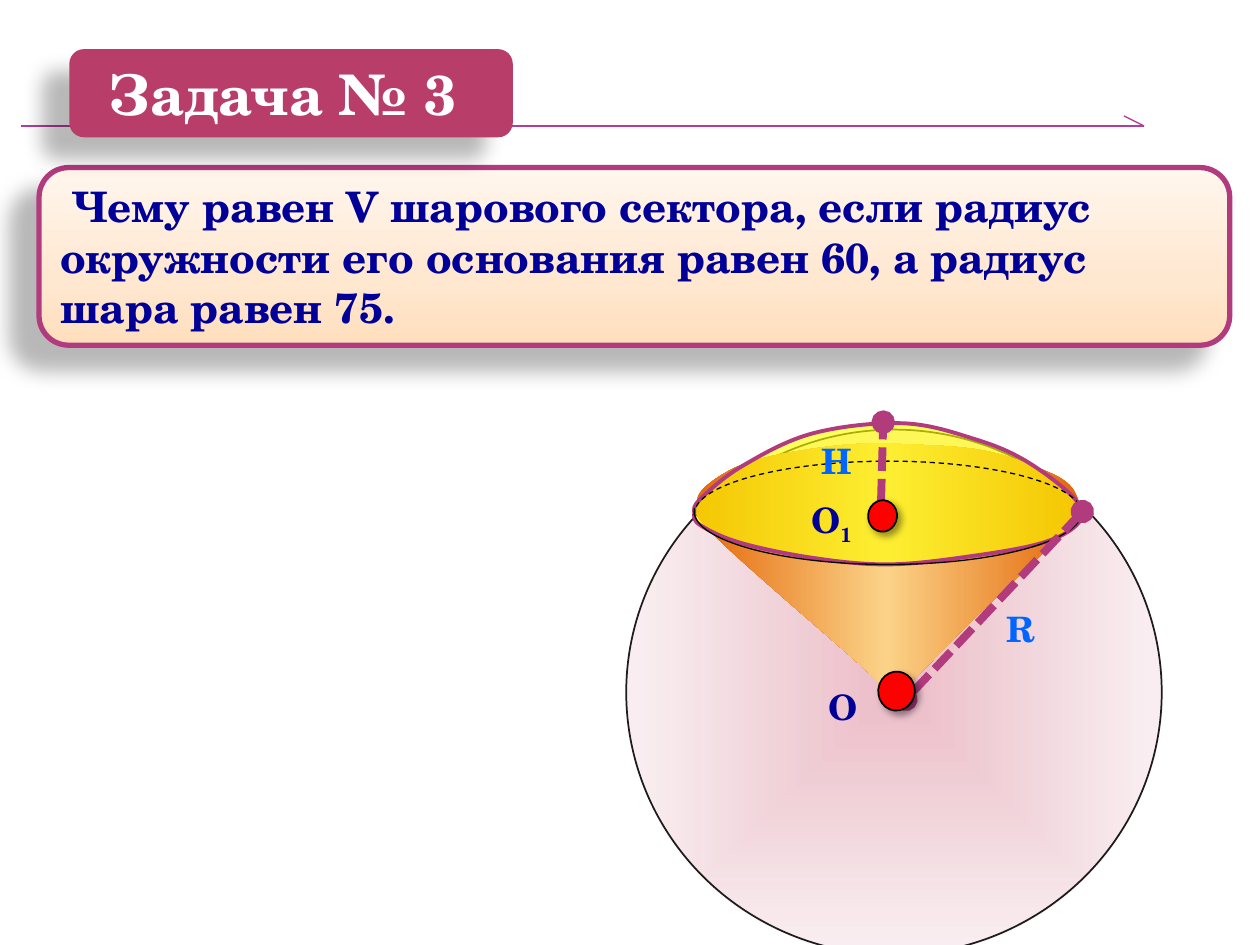
"""Builds a geometry slide about the volume of a spherical sector."""
import pptx
import pptx.dml.color
import pptx.enum.dml
import pptx.enum.shapes
import pptx.enum.text
import pptx.oxml
import pptx.oxml.ns
import pptx.oxml.xmlchemy
import pptx.util

Inches = pptx.util.Inches
Pt = pptx.util.Pt
RGBColor = pptx.dml.color.RGBColor
SHAPE = pptx.enum.shapes.MSO_SHAPE
STRAIGHT = pptx.enum.shapes.MSO_CONNECTOR.STRAIGHT
DASH = pptx.enum.dml.MSO_LINE
ALIGN = pptx.enum.text.PP_ALIGN
ANCHOR = pptx.enum.text.MSO_ANCHOR
FIT = pptx.enum.text.MSO_AUTO_SIZE

WHITE = RGBColor(0xFF, 0xFF, 0xFF)
BLACK = RGBColor(0x00, 0x00, 0x00)
RED = RGBColor(0xFF, 0x00, 0x00)
YELLOW = RGBColor(0xFF, 0xFF, 0x00)
NAVY = RGBColor(0x00, 0x00, 0x99)
BLUE = RGBColor(0x00, 0x66, 0xFF)
CRIMSON = RGBColor(0xB8, 0x3D, 0x68)
PLUM = RGBColor(0xB2, 0x3B, 0x7E)
VIOLET = RGBColor(0xB1, 0x3F, 0x9A)
CHARCOAL = RGBColor(0x1C, 0x1C, 0x1C)
PEACH = RGBColor(0xFF, 0xDE, 0xBC)
PALE_PEACH = RGBColor(0xFF, 0xE7, 0xD0)
CREAM = RGBColor(0xFF, 0xF6, 0xED)
ROSE = RGBColor(0xE2, 0x96, 0xA8)
PINK = RGBColor(0xEB, 0xC0, 0xC9)
PALE_PINK = RGBColor(0xF5, 0xE0, 0xE5)
ORANGE = RGBColor(0xE3, 0x64, 0x06)
SAND = RGBColor(0xFB, 0xD3, 0x88)

WIDE_SHADOW = (28, 11.8, 19.7, 141)
SMALL_SHADOW = (40, 4, 3, 45)
LINEAR = '<a:lin ang="{}" scaled="0"/>'
CENTRED = '<a:path path="shape"><a:fillToRect l="50000" t="50000" r="50000" b="50000"/></a:path>'


def write(shape, text, size=20, color=NAVY, subscript="", align=ALIGN.LEFT,
          anchor=ANCHOR.TOP, wrap=False, fit=FIT.SHAPE_TO_FIT_TEXT):
    frame = shape.text_frame
    frame.word_wrap = wrap
    frame.auto_size = fit
    frame.vertical_anchor = anchor
    paragraph = frame.paragraphs[0]
    paragraph.alignment = align
    for content in filter(None, (text, subscript)):
        run = paragraph.add_run()
        run.text = content
        run.font.name = "TeX Gyre Schola"
        run.font.size = Pt(size)
        run.font.bold = True
        run.font.color.rgb = color
        if content == subscript:
            run._r.get_or_add_rPr().set("baseline", "-25000")


def style(shape, stops=(), direction="", line=None, width=1, dash=None, shadow=None, ends=False):
    properties = shape._element.spPr
    namespace = pptx.oxml.ns.nsdecls("a")
    colors = [f'<a:srgbClr val="{color}"><a:alpha val="{alpha * 1000}"/></a:srgbClr>'
              for _, color, alpha in stops]
    if len(stops) == 1:
        properties.append(pptx.oxml.parse_xml(
            f"<a:solidFill {namespace}>{colors[0]}</a:solidFill>"))
    elif stops:
        marks = "".join(f'<a:gs pos="{stop[0] * 1000}">{color}</a:gs>'
                        for stop, color in zip(stops, colors))
        properties.append(pptx.oxml.parse_xml(
            f'<a:gradFill {namespace} rotWithShape="1"><a:gsLst>{marks}</a:gsLst>{direction}</a:gradFill>'))
    elif hasattr(shape, "fill"):
        shape.fill.background()
    if line is None:
        shape.line.fill.background()
    else:
        shape.line.color.rgb = line
        shape.line.width = Pt(width)
        if dash is not None:
            shape.line.dash_style = dash
        if ends:
            for tag in ("headEnd", "tailEnd"):
                properties.ln.append(pptx.oxml.parse_xml(f'<a:{tag} {namespace} type="oval"/>'))
    effect = ""
    if shadow:
        alpha, blur, distance, angle = shadow
        effect = (f'<a:outerShdw blurRad="{Pt(blur)}" dist="{Pt(distance)}" dir="{angle * 60000}" '
                  f'algn="ctr" rotWithShape="0"><a:srgbClr val="{BLACK}">'
                  f'<a:alpha val="{alpha * 1000}"/></a:srgbClr></a:outerShdw>')
    properties.append(pptx.oxml.parse_xml(f"<a:effectLst {namespace}>{effect}</a:effectLst>"))


presentation = pptx.Presentation()
presentation.slide_width = Inches(10)
presentation.slide_height = Inches(7.5)
slide = presentation.slides.add_slide(presentation.slide_layouts[5])
shapes = slide.shapes

for start_x, start_y in ((0.17, 1), (8.92, 0.92)):
    rule = shapes.add_connector(STRAIGHT, Inches(start_x), Inches(start_y), Inches(9.08), Inches(1))
    style(rule, line=VIOLET, width=0.75)

problem = shapes.add_shape(SHAPE.ROUNDED_RECTANGLE, Inches(0.31), Inches(1.33), Inches(9.45), Inches(1.41))
style(problem, [(0, PEACH, 100), (35, PALE_PEACH, 100), (100, CREAM, 100)],
      LINEAR.format(270 * 60000), PLUM, 3, shadow=WIDE_SHADOW)
write(problem, " Чему равен V шарового сектора, если радиус окружности его основания "
      "равен 60, а радиус шара равен 75.", size=24, anchor=ANCHOR.MIDDLE, wrap=True, fit=FIT.NONE)

title_area = tuple(map(Inches, (0.55, 0.39, 3.52, 0.7)))
title_plate = shapes.add_shape(SHAPE.ROUNDED_RECTANGLE, *title_area)
style(title_plate, [(0, CRIMSON, 100)], shadow=WIDE_SHADOW)
title = shapes.title
title.left, title.top, title.width, title.height = title_area
write(title, "Задача № 3 ", size=32, color=WHITE, align=ALIGN.CENTER, anchor=ANCHOR.MIDDLE,
      wrap=True, fit=FIT.NONE)
title._element.getparent().append(title._element)

sphere = shapes.add_shape(SHAPE.OVAL, Inches(4.97), Inches(3.41), Inches(4.25), Inches(4.17))
style(sphere, [(0, ROSE, 62), (50, PINK, 63), (95, PALE_PINK, 54)], CENTRED, CHARCOAL)

cone_knots = [(7.1, 5.54), (7.02, 5.47), (6.82, 5.27), (5.68, 4.26), (5.53, 3.99), (5.68, 3.8),
              (6.04, 3.64), (6.71, 3.53), (7.29, 3.53), (7.83, 3.58), (8.28, 3.73), (8.49, 3.85),
              (8.57, 4.01), (8.55, 4.11), (8.31, 4.36), (7.67, 4.97), (7.2, 5.45)]
cap_knots = [(5.56, 3.96), (5.89, 3.7), (6.45, 3.44), (7.17, 3.36), (7.75, 3.49), (8.16, 3.67),
             (8.54, 3.97), (8.56, 4.15), (8.27, 4.31), (7.67, 4.42), (7.05, 4.48), (6.46, 4.43),
             (5.88, 4.31), (5.56, 4.17), (5.51, 4.07)]
front_arc = [(8.57, 4), (8.58, 4.02), (8.59, 4.04), (8.59, 4.06), (8.59, 4.29), (7.9, 4.48),
             (7.05, 4.48), (6.2, 4.48), (5.51, 4.29), (5.51, 4.06), (5.51, 4.05), (5.51, 4.04),
             (5.51, 4.03)]
rear_arc = [(x, 8.14 - y) for x, y in front_arc]

smooth_outlines = []
for knots in (cone_knots, cap_knots):
    points = [knots[0]]
    for index in range(len(knots)):
        before, start, end, after = (knots[(index + shift) % len(knots)] for shift in (-1, 0, 1, 2))
        points.append([b + (c - a) / 6 for a, b, c in zip(before, start, end)])
        points.append([c - (d - b) / 6 for b, c, d in zip(start, end, after)])
        points.append(end)
    smooth_outlines.append(points)
cone, cap = smooth_outlines

cone_format = dict(stops=[(0, ORANGE, 100), (50, SAND, 100), (100, ORANGE, 100)],
                   direction=LINEAR.format(0))
for points, closed, outline_format in (
        (cone, True, cone_format),
        (cap, True, dict(stops=[(0, YELLOW, 63)], line=PLUM, width=2.25)),
        (front_arc, False, dict(line=BLACK, width=0.75)),
        (rear_arc, False, dict(line=BLACK, width=0.75, dash=DASH.DASH))):
    points = [(Inches(x), Inches(y)) for x, y in points]
    builder = shapes.build_freeform(*points[0])
    builder.add_line_segments(points[1:], close=closed)
    outline = builder.convert_to_shape()
    segments = list(outline._element.iter(pptx.oxml.ns.qn("a:lnTo")))
    for index in range(0, len(segments), 3):
        curve = pptx.oxml.xmlchemy.OxmlElement("a:cubicBezTo")
        segments[index].addprevious(curve)
        for segment in segments[index:index + 3]:
            curve.append(segment[0])
            segment.getparent().remove(segment)
    style(outline, **outline_format)

for label, subscript, left, top, width, color in (
        ("O", "", 6.48, 5.39, 0.43, NAVY), ("O", "1", 6.34, 3.91, 0.56, NAVY),
        ("Н", "", 6.42, 3.44, 0.46, BLUE), ("R", "", 7.89, 4.77, 0.43, BLUE)):
    box = shapes.add_textbox(Inches(left), Inches(top), Inches(width), Inches(0.44))
    write(box, label, color=color, subscript=subscript)

for ends in ((6.99, 4.07, 7.01, 3.35), (7.19, 5.55, 8.59, 4.06)):
    segment = shapes.add_connector(STRAIGHT, *map(Inches, ends))
    style(segment, line=PLUM, width=4.5, dash=DASH.SQUARE_DOT, ends=True)

for position in ((6.89, 3.97, 0.23, 0.25), (6.97, 5.33, 0.29, 0.31)):
    center = shapes.add_shape(SHAPE.OVAL, *map(Inches, position))
    center.rotation = 6.3
    style(center, [(0, RED, 100)], line=BLACK, shadow=SMALL_SHADOW)

presentation.save("out.pptx")
